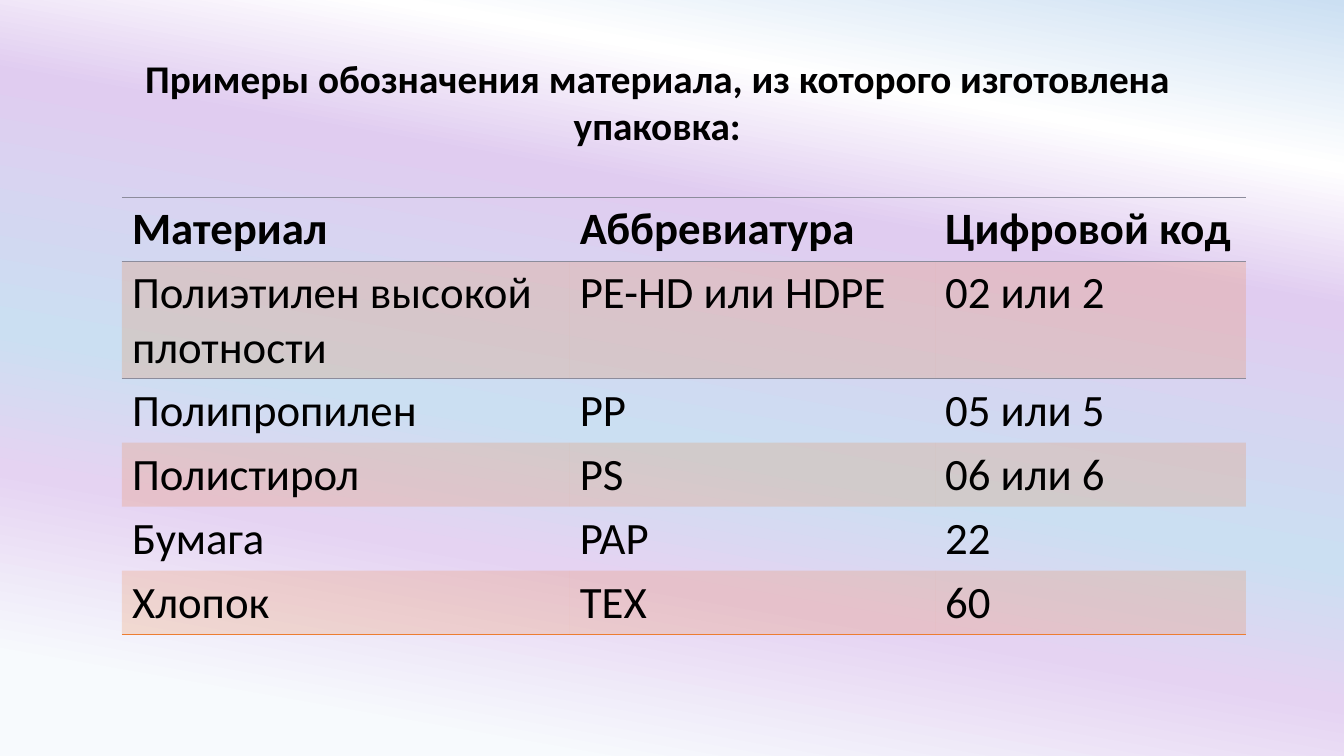
from typing import NamedTuple

from lxml import etree
from pptx import Presentation
from pptx.dml.color import RGBColor
from pptx.enum.text import PP_ALIGN
from pptx.oxml.ns import qn
from pptx.util import Pt

CENTER = PP_ALIGN.CENTER
FONT = "Calibri"
BLACK = RGBColor(0x00, 0x00, 0x00)
ORANGE = RGBColor(0xED, 0x7D, 0x31)
GREY = RGBColor(0x8C, 0x8C, 0x9C)
MIST = RGBColor(0xF7, 0xFA, 0xFD)
LILAC = RGBColor(0xE5, 0xD3, 0xF2)
LAVENDER = RGBColor(0xE0, 0xCC, 0xF0)
SKY = RGBColor(0xCB, 0xDF, 0xF2)
WHITE = RGBColor(0xFF, 0xFF, 0xFF)

NO_STYLE = "{2D5ABB26-0587-4C30-8999-92F81FD0307C}"
BAND_OPACITY = 20
COL_WIDTHS = (319.9, 260.9, 222)
ROW_HEIGHT = 45.6
TALL_ROW_HEIGHT = 84


class Stop(NamedTuple):
    position: int
    color: RGBColor


class Material(NamedTuple):
    name: str
    abbreviation: str
    code: str


STOPS = (
    Stop(10, MIST), Stop(29, LILAC), Stop(43, SKY),
    Stop(69, LAVENDER), Stop(83, WHITE), Stop(100, SKY),
)
ROWS = (
    Material("Материал", "Аббревиатура", "Цифровой код"),
    Material("Полиэтилен высокой плотности", "PE-HD или HDPE", "02 или 2"),
    Material("Полипропилен", "PP", "05 или 5"),
    Material("Полистирол", "PS", "06 или 6"),
    Material("Бумага", "PAP", "22"),
    Material("Хлопок", "TEX", "60"),
)


def set_background(s, stops: tuple[Stop, ...], angle: float) -> None:
    fill = s.background.fill
    fill.gradient()
    fill.gradient_angle = angle
    stop_list = s.element.find(".//" + qn("a:gsLst"))
    for old in list(stop_list):
        stop_list.remove(old)
    for stop in stops:
        gs = etree.SubElement(stop_list, qn("a:gs"), pos=str(stop.position * 1000))
        etree.SubElement(gs, qn("a:srgbClr"), val=str(stop.color))


def format_text(p, size: float, bold: bool) -> None:
    for r in p.runs:
        r.font.name = FONT
        r.font.size = Pt(size)
        r.font.bold = bold
        r.font.color.rgb = BLACK


def set_borders(cell, sides: dict[str, RGBColor]) -> None:
    tc_pr = cell._tc.get_or_add_tcPr()
    for i, (side, color) in enumerate(sides.items()):
        ln = etree.Element(qn("a:" + side), w=str(Pt(1)))
        fill = etree.SubElement(ln, qn("a:solidFill"))
        etree.SubElement(fill, qn("a:srgbClr"), val=str(color))
        tc_pr.insert(i, ln)


def fill_cell(cell, banded: bool) -> None:
    if not banded:
        cell.fill.background()
        return
    cell.fill.solid()
    cell.fill.fore_color.rgb = ORANGE
    color = cell._tc.tcPr.find(".//" + qn("a:srgbClr"))
    etree.SubElement(color, qn("a:alpha"), val=str(BAND_OPACITY * 1000))


def add_title(s, text: str) -> None:
    tf = s.shapes.add_textbox(Pt(87.1), Pt(35.3), Pt(764.6), Pt(211)).text_frame
    tf.word_wrap = True
    p = tf.paragraphs[0]
    p.text = text
    p.alignment = CENTER
    format_text(p, 28, True)


def add_material_table(s, rows: tuple[Material, ...]) -> None:
    heights = [TALL_ROW_HEIGHT if i == 1 else ROW_HEIGHT for i in range(len(rows))]
    frame = s.shapes.add_table(len(rows), len(COL_WIDTHS), Pt(87.1), Pt(140.9),
                               Pt(sum(COL_WIDTHS)), Pt(sum(heights)))
    table = frame.table
    table.first_row = table.horz_banding = False
    table._tbl.tblPr.find(qn("a:tableStyleId")).text = NO_STYLE
    for column, width in zip(table.columns, COL_WIDTHS):
        column.width = Pt(width)

    borders = {0: {"lnT": GREY, "lnB": GREY}, 1: {"lnT": GREY},
               len(rows) - 1: {"lnB": ORANGE}}
    for i, material in enumerate(rows):
        table.rows[i].height = Pt(heights[i])
        for j, text in enumerate(material):
            cell = table.cell(i, j)
            cell.text_frame.text = text
            format_text(cell.text_frame.paragraphs[0], 32, i == 0)
            fill_cell(cell, i % 2 == 1)
            set_borders(cell, borders.get(i, {}))


def main() -> None:
    prs = Presentation()
    prs.slide_width, prs.slide_height = Pt(960), Pt(540)
    s = prs.slides.add_slide(prs.slide_layouts[6])

    # Background
    set_background(s, STOPS, 80)

    # Title and table
    add_title(s, "Примеры обозначения материала, из которого изготовлена упаковка:")
    add_material_table(s, ROWS)

    prs.save("out.pptx")


if __name__ == "__main__":
    main()
